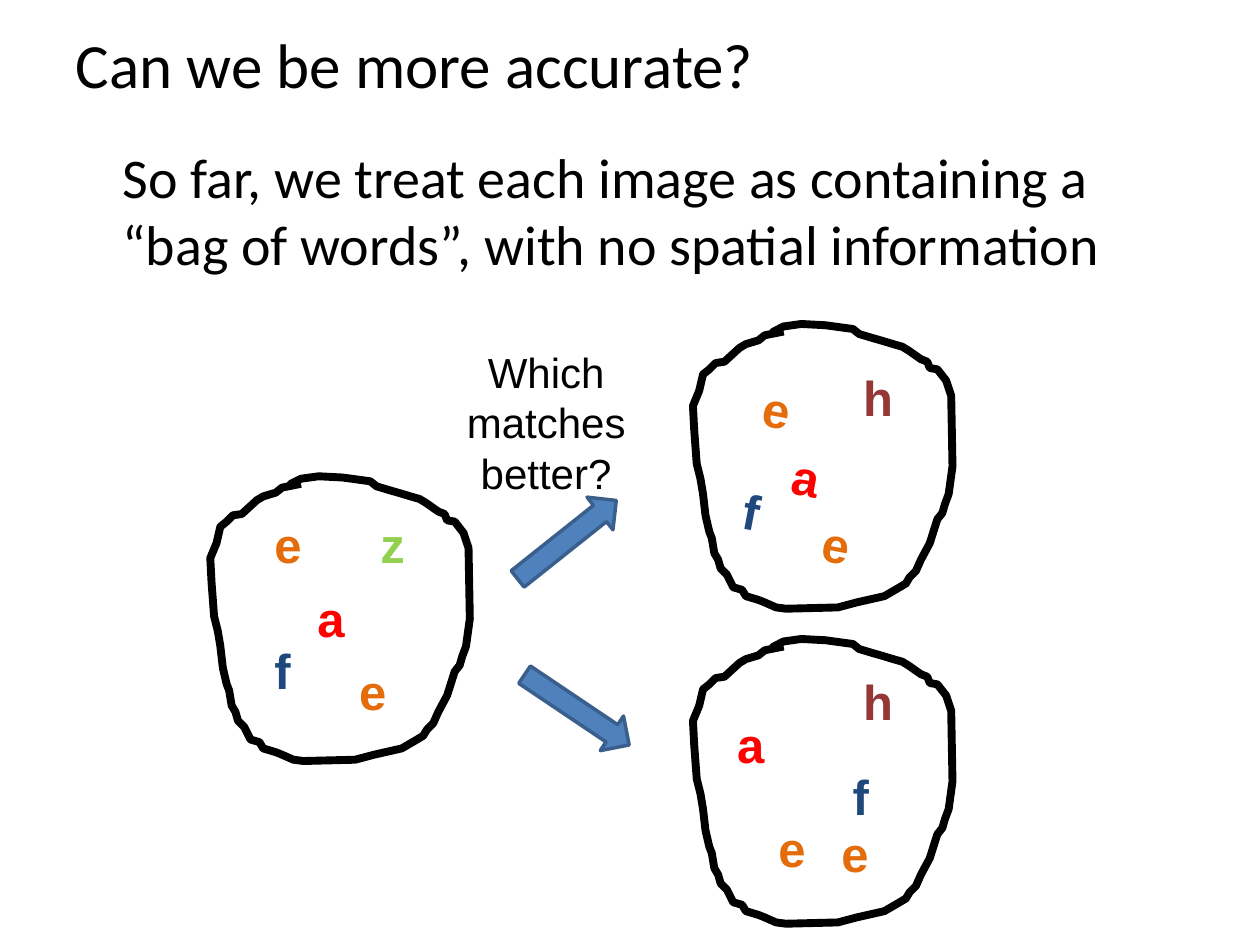
from pptx import Presentation
from pptx.dml.color import RGBColor
from pptx.enum.shapes import MSO_SHAPE
from pptx.enum.text import MSO_ANCHOR, MSO_AUTO_SIZE, PP_ALIGN
from pptx.oxml.ns import qn
from pptx.util import Cm, Pt
from lxml.etree import SubElement

TITLE = "Can we be more accurate?"
STATEMENT = "So far, we treat each image as containing a “bag of words”, with no spatial information"
QUESTION = "Which matches better?"

WORD_STYLES = {
    "a": ("FF0000", 1.07),
    "e": ("E46C0A", 1.07),
    "f": ("1F497D", 0.84),
    "h": ("953735", 1.12),
    "z": ("92D050", 1.02),
}
TILT = 10.9
BAGS = [
    {"at": (4.24, 9.5),
     "words": [("a", 6.15, 11.73, 0), ("f", 5.28, 12.78, 0), ("z", 7.42, 10.24, 0),
               ("e", 6.99, 13.21, 0), ("e", 5.28, 10.24, 0)]},
    {"at": (13.97, 12.78),
     "words": [("a", 14.61, 14.27, 0), ("f", 16.94, 15.32, 0), ("e", 16.71, 16.48, 0),
               ("e", 15.44, 16.38, 0), ("h", 17.15, 13.41, 0)]},
    {"at": (13.97, 6.43),
     "words": [("a", 15.75, 8.89, TILT), ("f", 14.76, 9.58, TILT), ("e", 16.36, 10.26, TILT),
               ("e", 15.16, 7.52, TILT), ("h", 17.15, 7.29, 0)]},
]
ARROWS = [(10.16, 10.46, 321.5), (10.36, 13.89, 33.9)]

OUTLINE_UNIT = Cm(0.0254)
BAG_OUTLINE = [
    (72, 10), (57, 13), (52, 17), (42, 20), (37, 23), (25, 34), (18, 35), (13, 40),
    (8, 44), (5, 57), (0, 69), (1, 88), (3, 115), (6, 127), (8, 139), (10, 156),
    (13, 169), (15, 174), (17, 186), (20, 191), (22, 198), (27, 203), (32, 213),
    (39, 215), (42, 220), (52, 223), (57, 225), (66, 229), (74, 230), (115, 229),
    (130, 225), (152, 220), (164, 213), (169, 210), (172, 205), (177, 200),
    (181, 191), (188, 178), (194, 159), (198, 154), (200, 147), (203, 139),
    (206, 117), (205, 61), (201, 49), (194, 40), (188, 39), (186, 34), (181, 32),
    (171, 25), (166, 22), (159, 20), (149, 17), (142, 15), (132, 12), (127, 8),
    (105, 5), (86, 4), (72, 6), (64, 10), (62, 13),
]


def colour(hex_code):
    return RGBColor.from_string(hex_code)


def write(shape, text, size, font="Arial", hex_code="000000", bold=False, align=PP_ALIGN.LEFT):
    paragraph = shape.text_frame.paragraphs[0]
    paragraph.text = text
    paragraph.alignment = align
    paragraph.font.name = font
    paragraph.font.size = Pt(size)
    paragraph.font.bold = bold
    paragraph.font.color.rgb = colour(hex_code)
    return paragraph


def add_text_area(slide, left, top, width, height, wrap=True, grow=True):
    area = slide.shapes.add_textbox(Cm(left), Cm(top), Cm(width), Cm(height))
    area.text_frame.word_wrap = wrap
    area.text_frame.auto_size = MSO_AUTO_SIZE.SHAPE_TO_FIT_TEXT if grow else MSO_AUTO_SIZE.NONE
    return area


def add_bag(slide, left, top):
    builder = slide.shapes.build_freeform(*BAG_OUTLINE[0], scale=OUTLINE_UNIT)
    builder.add_line_segments(BAG_OUTLINE[1:], close=False)
    bag = builder.convert_to_shape(Cm(left), Cm(top))
    bag.shadow.inherit = False
    bag.fill.background()
    bag.line.color.rgb = colour("000000")
    bag.line.width = Pt(4.5)
    SubElement(bag.line._get_or_add_ln(), qn("a:round"))


def add_word(slide, word, left, top, tilt):
    hex_code, width = WORD_STYLES[word]
    label = add_text_area(slide, left, top, width, 1.22 if tilt else 1.45, wrap=False)
    label.rotation = tilt
    write(label, word, 28, hex_code=hex_code, bold=True)


def add_arrow(slide, left, top, angle):
    arrow = slide.shapes.add_shape(MSO_SHAPE.RIGHT_ARROW, Cm(left), Cm(top), Cm(2.54), Cm(0.84))
    arrow.rotation = angle
    arrow.shadow.inherit = False
    arrow.fill.solid()
    arrow.fill.fore_color.rgb = colour("4F81BD")
    arrow.line.color.rgb = colour("3A5F8C")
    arrow.line.width = Pt(2)


def main():
    """Build the slide comparing bags of words without spatial information."""
    presentation = Presentation()
    presentation.slide_width, presentation.slide_height = Cm(25.4), Cm(19.05)
    slide = presentation.slides.add_slide(presentation.slide_layouts[5])

    title = slide.shapes.title
    title.left, title.top, title.width, title.height = Cm(1.27), Cm(0), Cm(22.86), Cm(2.54)
    title.text_frame.vertical_anchor = MSO_ANCHOR.MIDDLE
    write(title, TITLE, 36, font="Calibri")

    statement = add_text_area(slide, 1.27, 2.74, 22.86, 14.27, grow=False)
    paragraph = write(statement, STATEMENT, 32, font="Calibri")
    paragraph.space_before = Pt(2)
    paragraph._p.get_or_add_pPr().set("marL", str(Cm(0.95)))

    for bag in BAGS:
        add_bag(slide, *bag["at"])
        for word in bag["words"]:
            add_word(slide, *word)

    for arrow in ARROWS:
        add_arrow(slide, *arrow)

    question = add_text_area(slide, 8.05, 6.86, 5.92, 3.33)
    write(question, QUESTION, 24, align=PP_ALIGN.CENTER)

    presentation.save("out.pptx")


if __name__ == "__main__":
    main()
